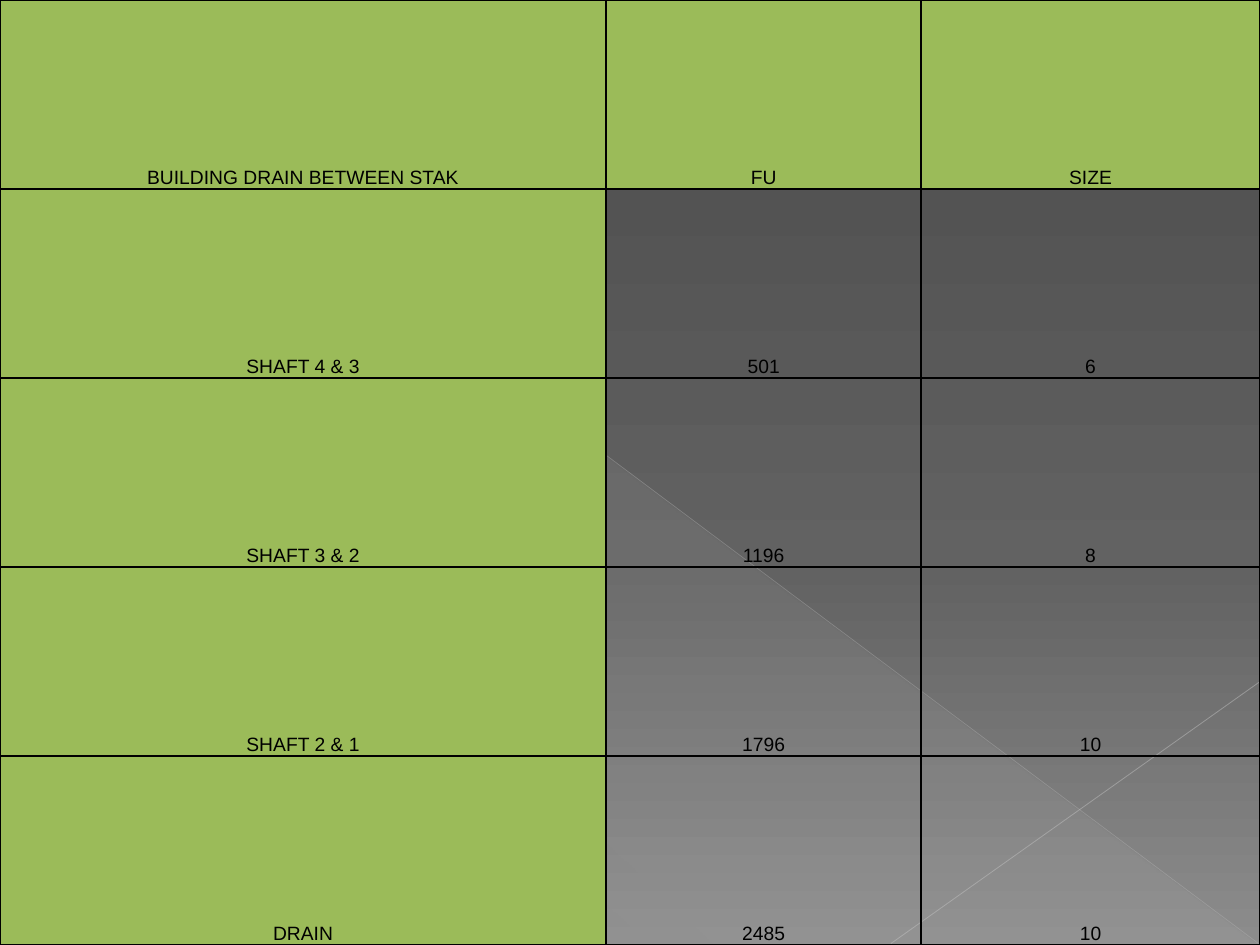
"""Build a slide with a drain sizing table over a grey gradient with faint diagonals."""
import pptx
import pptx.dml.color
import pptx.enum.shapes
import pptx.enum.text
import pptx.oxml
import pptx.oxml.ns
import pptx.util
from lxml import etree

Cm, Pt, qn = pptx.util.Cm, pptx.util.Pt, pptx.oxml.ns.qn

WIDTH, HEIGHT = 25.4, 19.05
ROWS = [
    ("BUILDING DRAIN BETWEEN STAK", "FU", "SIZE"),
    ("SHAFT 4 & 3", "501", "6"),
    ("SHAFT 3 & 2", "1196", "8"),
    ("SHAFT 2 & 1", "1796", "10"),
    ("DRAIN", "2485", "10"),
]
COL_WIDTHS = [12.22, 6.35, 6.83]
GREEN, BLACK = "9BBB59", "000000"
BACKDROP = [(0, "4A4A4A", 100), (60, "626262", 100), (100, "8C8C8C", 100)]
SHEEN = [(0, "D2D2D2", 10), (70, "D2D2D2", 8), (100, "D2D2D2", 1)]
DIAGONALS = [
    ((0, 0.03, 25.37, 19.02), "BFBFBF", 0.39, 35),
    ((25.4, 13.74, 17.96, 19.02), "C6C6C6", 0.47, 45),
]
CELL_FORMAT = {
    "vertical_anchor": pptx.enum.text.MSO_ANCHOR.BOTTOM,
    "margin_left": Cm(0.18), "margin_right": Cm(0.18),
    "margin_top": 0, "margin_bottom": 0,
}
PARAGRAPH_FORMAT = {"alignment": pptx.enum.text.PP_ALIGN.CENTER, "line_spacing": 1.15}
FONT_FORMAT = {"name": "Arial", "size": Pt(11), "bold": False}


def rgb(value):
    return pptx.dml.color.RGBColor.from_string(value)


def apply(obj, values):
    for name, value in values.items():
        setattr(obj, name, value)


def add_alpha(clr, percent):
    etree.SubElement(clr, qn("a:alpha"), val=str(percent * 1000))


def set_gradient(fill, root, stops, angle):
    fill.gradient()
    grad = next(root.iter(qn("a:gradFill")))
    gs_list = grad.find(qn("a:gsLst"))
    gs_list.clear()
    for pos, color, opacity in stops:
        gs = etree.SubElement(gs_list, qn("a:gs"), pos=str(pos * 1000))
        add_alpha(etree.SubElement(gs, qn("a:srgbClr"), val=color), opacity)
    grad.find(qn("a:lin")).set("ang", str(angle * 60000))


def add_diagonal(s, ends, color, width, opacity):
    line = s.shapes.add_connector(
        pptx.enum.shapes.MSO_CONNECTOR.STRAIGHT, *[Cm(v) for v in ends])
    line.line.width = Pt(width)
    line.line.color.rgb = rgb(color)
    add_alpha(next(line.element.iter(qn("a:srgbClr"))), opacity)
    etree.SubElement(line.element.spPr, qn("a:effectLst"))


def set_borders(cell):
    tc_pr = cell._tc.get_or_add_tcPr()
    for i, side in enumerate("LRTB"):
        ln = etree.Element(qn(f"a:ln{side}"), w=str(Pt(1)))
        fill = etree.SubElement(ln, qn("a:solidFill"))
        etree.SubElement(fill, qn("a:srgbClr"), val=BLACK)
        tc_pr.insert(i, ln)


def fill_cell(cell, text, shaded):
    apply(cell, CELL_FORMAT)
    if shaded:
        cell.fill.solid()
        cell.fill.fore_color.rgb = rgb(GREEN)
    else:
        cell.fill.background()
    set_borders(cell)
    p = cell.text_frame.paragraphs[0]
    apply(p, PARAGRAPH_FORMAT)
    r = p.add_run()
    r.text = text
    apply(r.font, FONT_FORMAT)
    r.font.color.rgb = rgb(BLACK)


def add_drain_table(s):
    table = s.shapes.add_table(
        len(ROWS), len(COL_WIDTHS), 0, 0, Cm(WIDTH), Cm(HEIGHT)).table
    apply(table, {"first_row": False, "horz_banding": False})
    for col, width in zip(table.columns, COL_WIDTHS):
        col.width = Cm(width)
    for i, row in enumerate(ROWS):
        table.rows[i].height = Cm(HEIGHT / len(ROWS))
        for j, text in enumerate(row):
            fill_cell(table.cell(i, j), text, i == 0 or j == 0)


def main():
    prs = pptx.Presentation()
    apply(prs, {"slide_width": Cm(WIDTH), "slide_height": Cm(HEIGHT)})
    s = prs.slides.add_slide(prs.slide_layouts[6])
    set_gradient(s.background.fill, s.element, BACKDROP, 90)
    sp = s.shapes.add_shape(
        pptx.enum.shapes.MSO_SHAPE.RIGHT_TRIANGLE, Cm(0.03), Cm(0.05), Cm(25.35), Cm(19))
    sp.shadow.inherit = False
    sp.line.fill.background()
    set_gradient(sp.fill, sp.element, SHEEN, 133)
    for diagonal in DIAGONALS:
        add_diagonal(s, *diagonal)
    add_drain_table(s)
    prs.save("out.pptx")


if __name__ == "__main__":
    main()
